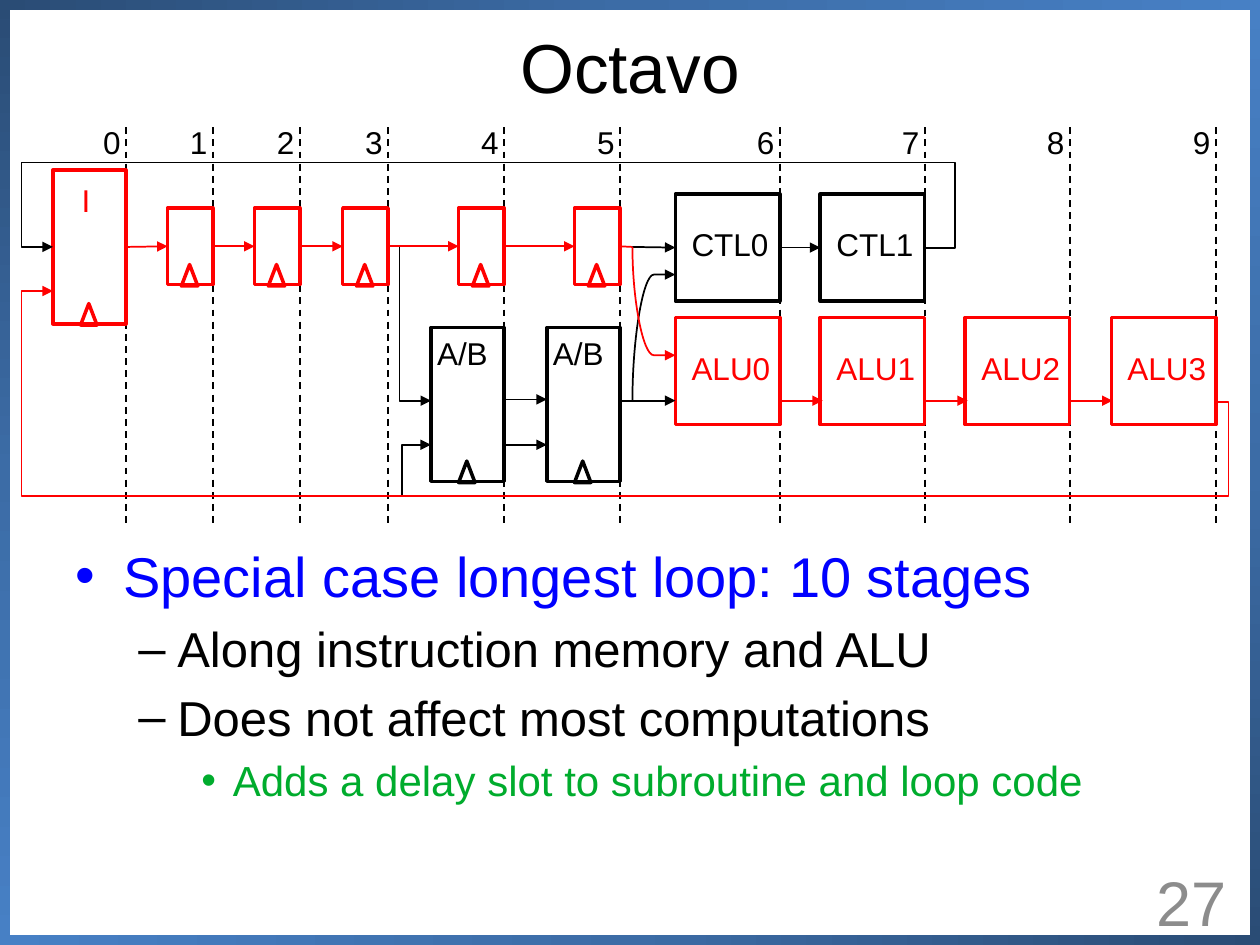
from copy import deepcopy

from lxml.etree import SubElement
from pptx import Presentation
from pptx.dml.color import RGBColor
from pptx.enum.dml import MSO_LINE
from pptx.enum.shapes import MSO_CONNECTOR as Connector, MSO_SHAPE as Preset
from pptx.enum.text import MSO_ANCHOR as Anchor, MSO_AUTO_SIZE as AutoSize, PP_ALIGN as Align
from pptx.oxml.ns import qn
from pptx.util import Inches, Pt

COLORS = {"black": "000000", "red": "FF0000", "blue": "0000FF", "green": "00AC2D", "gray": "8C8C8C",
          "deep": "2A4C75", "middle": "3C6CA6", "light": "4780C5"}
WIDTH, HEIGHT, FRAME = 10, 7.5, 0.08
STAGES = [1, 1.69, 2.38, 3.08, 4, 4.92, 6.19, 7.34, 8.49, 9.65]
MEMORY, REGISTER, UNIT = (0.58, 1.22), (0.36, 0.61), (0.83, 0.85)
PIPELINE_ROW, ALU_ROW, OPERAND_ROWS = 1.96, 3.18, (3.17, 3.53)
FORK, LOOP_LEFT, LOOP_BOTTOM = 5.02, 0.17, 3.94
RIGHT_SIDE, LEFT_SIDE = 3, 1
BULLETS = [
    ("Special case longest loop: 10 stages", 0, 32, "blue"),
    ("Along instruction memory and ALU", 1, 28, "black"),
    ("Does not affect most computations", 1, 28, "black"),
    ("Adds a delay slot to subroutine and loop code", 2, 24, "green"),
]
BULLET_LEVELS = [("•", 0.38, 0.38), ("–", 0.81, 0.31), ("•", 1.25, 0.25)]


def rgb(name):
    """Return the named colour."""
    return RGBColor.from_string(COLORS[name])


def write(paragraph, text, size=18, color="black", align=Align.LEFT):
    """Write one formatted run into a paragraph."""
    paragraph.alignment = align
    run = paragraph.add_run()
    run.text = text
    run.font.name, run.font.size = "Arial", Pt(size)
    run.font.color.rgb = rgb(color)


def add_frame(slide, left, top, width, height, wrap=True, anchor=Anchor.TOP):
    """Add a text box and return its text frame."""
    frame = slide.shapes.add_textbox(*map(Inches, (left, top, width, height))).text_frame
    frame.word_wrap, frame.vertical_anchor = wrap, anchor
    return frame


def add_label(slide, text, left, top, width, color="black"):
    """Add a short label that does not wrap."""
    frame = add_frame(slide, left, top, width, 0.4, wrap=False)
    frame.auto_size = AutoSize.SHAPE_TO_FIT_TEXT
    write(frame.paragraphs[0], text, color=color)


def add_outline(slide, preset, left, top, width, height, color):
    """Add an unfilled shape with a coloured outline."""
    shape = slide.shapes.add_shape(preset, *map(Inches, (left, top, width, height)))
    shape.shadow.inherit = False
    shape.fill.background()
    shape.line.color.rgb, shape.line.width = rgb(color), Pt(2)
    return shape


def add_box(slide, stage, top, size, color):
    """Add a block whose right side lies on a stage line."""
    return add_outline(slide, Preset.RECTANGLE, STAGES[stage] - size[0], top, *size, color)


def add_clocked_box(slide, stage, top, size, color):
    """Add a block with a clock triangle at its foot."""
    box = add_box(slide, stage, top, size, color)
    center, bottom = STAGES[stage] - size[0] / 2, top + size[1]
    add_outline(slide, Preset.ISOSCELES_TRIANGLE, center - 0.07, bottom - 0.16, 0.13, 0.17, color)
    return box


def add_unit(slide, name, stage, top, color):
    """Add a named control or arithmetic unit."""
    add_label(slide, name, STAGES[stage] - UNIT[0] + 0.03, top + 0.2, UNIT[0], color)
    return add_box(slide, stage, top, UNIT, color)


def add_line(slide, start, end, color="black", kind=Connector.STRAIGHT, arrow=True,
             source=None, target=None):
    """Add a connector, joined to the given blocks."""
    line = slide.shapes.add_connector(kind, *map(Inches, (*start, *end)))
    line.line.color.rgb, line.line.width = rgb(color), Pt(1)
    if source is not None:
        line.begin_connect(source, RIGHT_SIDE)
    if target is not None:
        line.end_connect(target, LEFT_SIDE)
    properties = line._element.spPr
    if arrow:
        SubElement(properties.find(qn("a:ln")), qn("a:tailEnd"), type="triangle")
    SubElement(properties, qn("a:effectLst"))
    return line


def set_bends(line, preset, bends):
    """Set the preset and bend positions of a connector."""
    geometry = line._element.spPr.find(qn("a:prstGeom"))
    geometry.set("prst", preset)
    values = geometry.find(qn("a:avLst"))
    if values is None:
        values = SubElement(geometry, qn("a:avLst"))
    for number, bend in enumerate(bends, 1):
        SubElement(values, qn("a:gd"), name=f"adj{number}", fmla=f"val {round(bend * 100000)}")


def add_loop(slide, start, end, right, across, color):
    """Add a feedback arrow that runs round to the left edge."""
    line = add_line(slide, start, end, color, Connector.ELBOW)
    span, rise = end[0] - start[0], end[1] - start[1]
    bends = (right - start[0]) / span, (across - start[1]) / rise, (LOOP_LEFT - start[0]) / span
    set_bends(line, "bentConnector5", bends)


def add_branch(slide, start, end, color="black", kind=Connector.ELBOW):
    """Add an arrow that leaves vertically and arrives from the left."""
    width, rise = end[0] - start[0], end[1] - start[1]
    length = abs(rise)
    left, top = (start[0] + end[0] - length) / 2, (start[1] + end[1] - width) / 2
    near, far = (top, top + width) if rise > 0 else (top + width, top)
    line = add_line(slide, (left + length, near), (left, far), color, kind)
    line.rotation = 270 if rise > 0 else 90
    set_bends(line, "bentConnector3" if kind == Connector.ELBOW else "curvedConnector3", [1])


def add_border(slide):
    """Add the four gradient bars round the slide."""
    bars = [(0, 0, FRAME, HEIGHT, 270), (WIDTH - FRAME, 0, FRAME, HEIGHT, 90),
            (0, HEIGHT - FRAME, WIDTH, FRAME, 180), (0, 0, WIDTH, FRAME, 0)]
    for *place, angle in bars:
        bar = slide.shapes.add_shape(Preset.RECTANGLE, *map(Inches, place))
        bar.shadow.inherit = False
        bar.line.fill.background()
        bar.fill.gradient()
        bar.fill.gradient_angle = angle
        stops = bar._element.spPr.find(qn("a:gradFill")).find(qn("a:gsLst"))
        stops.append(deepcopy(stops[0]))
        for stop, name, position in zip(bar.fill.gradient_stops, ("deep", "middle", "light"), (0, 0.5, 1)):
            stop.color.rgb, stop.position = rgb(name), position


def add_bullets(slide):
    """Add the bulleted list below the diagram."""
    frame = add_frame(slide, 0.5, 4.25, 9, 2.58)
    for index, (text, level, size, color) in enumerate(BULLETS):
        paragraph = frame.add_paragraph() if index else frame.paragraphs[0]
        write(paragraph, text, size=size, color=color)
        paragraph.level = level
        mark, margin, hanging = BULLET_LEVELS[level]
        properties = paragraph._p.get_or_add_pPr()
        properties.set("marL", str(Inches(margin)))
        properties.set("indent", str(-Inches(hanging)))
        SubElement(SubElement(properties, qn("a:spcBef")), qn("a:spcPct"), val="20000")
        SubElement(properties, qn("a:buFont"), typeface="Arial")
        SubElement(properties, qn("a:buChar"), char=mark)


def add_stages(slide):
    """Add the numbered dashed stage lines."""
    for number, column in enumerate(STAGES):
        line = add_line(slide, (column, 1.01), (column, 4.18), arrow=False)
        line.line.dash_style = MSO_LINE.DASH
        add_label(slide, str(number), column - 0.28, 0.93, 0.34)


def add_pipeline(slide):
    """Add instruction memory, registers and control units in the upper row."""
    memory = add_clocked_box(slide, 0, 1.35, MEMORY, "red")
    add_label(slide, "I", 0.55, 1.39, 0.27, "red")
    registers = [add_clocked_box(slide, stage, 1.65, REGISTER, "red") for stage in range(1, 6)]
    controls = [add_unit(slide, f"CTL{i}", 6 + i, 1.54, "black") for i in range(2)]
    row = (0, PIPELINE_ROW)
    for source, target in zip([memory, *registers], registers):
        add_line(slide, row, row, "red", source=source, target=target)
    add_line(slide, row, (FORK, PIPELINE_ROW), "red", arrow=False, source=registers[-1])
    add_line(slide, (FORK, PIPELINE_ROW), row, target=controls[0])
    add_line(slide, row, row, source=controls[0], target=controls[1])
    add_loop(slide, (STAGES[7], 1.97), (0.42, PIPELINE_ROW), 7.58, 1.28, "black")


def add_datapath(slide):
    """Add data memories and arithmetic units in the lower row."""
    for stage in (4, 5):
        add_clocked_box(slide, stage, 2.6, MEMORY, "black")
        add_label(slide, "A/B", STAGES[stage] - 0.63, 2.6, 0.61)
    for index in range(4):
        add_unit(slide, f"ALU{index}", 6 + index, 2.52, "red")
    for column in STAGES[6:9]:
        add_line(slide, (column, ALU_ROW), (column + 0.34, ALU_ROW), "red")
    for row in OPERAND_ROWS:
        add_line(slide, (STAGES[4], row), (STAGES[5] - MEMORY[0], row))
    add_line(slide, (STAGES[5], ALU_ROW), (5.36, ALU_ROW))
    add_branch(slide, (3.17, PIPELINE_ROW), (3.42, ALU_ROW))
    add_branch(slide, (3.19, LOOP_BOTTOM), (3.42, OPERAND_ROWS[1]))
    add_branch(slide, (FORK, ALU_ROW), (5.36, 2.18), kind=Connector.CURVE)
    add_branch(slide, (FORK, PIPELINE_ROW), (5.36, 2.82), "red", Connector.CURVE)
    add_loop(slide, (STAGES[9], 3.19), (0.42, 2.31), 9.75, LOOP_BOTTOM, "red")


def main():
    """Build and save the slide."""
    presentation = Presentation()
    presentation.slide_width, presentation.slide_height = Inches(WIDTH), Inches(HEIGHT)
    slide = presentation.slides.add_slide(presentation.slide_layouts[6])
    add_border(slide)
    title = add_frame(slide, 0.5, 0.3, 9, 0.45, anchor=Anchor.MIDDLE)
    write(title.paragraphs[0], "Octavo", size=39.6, align=Align.CENTER)
    number = add_frame(slide, 7.5, 6.95, 2.33, 0.4, anchor=Anchor.MIDDLE)
    write(number.paragraphs[0], "27", size=36, color="gray", align=Align.RIGHT)
    add_bullets(slide)
    for add_part in (add_stages, add_pipeline, add_datapath):
        add_part(slide)
    presentation.save("out.pptx")


if __name__ == "__main__":
    main()
